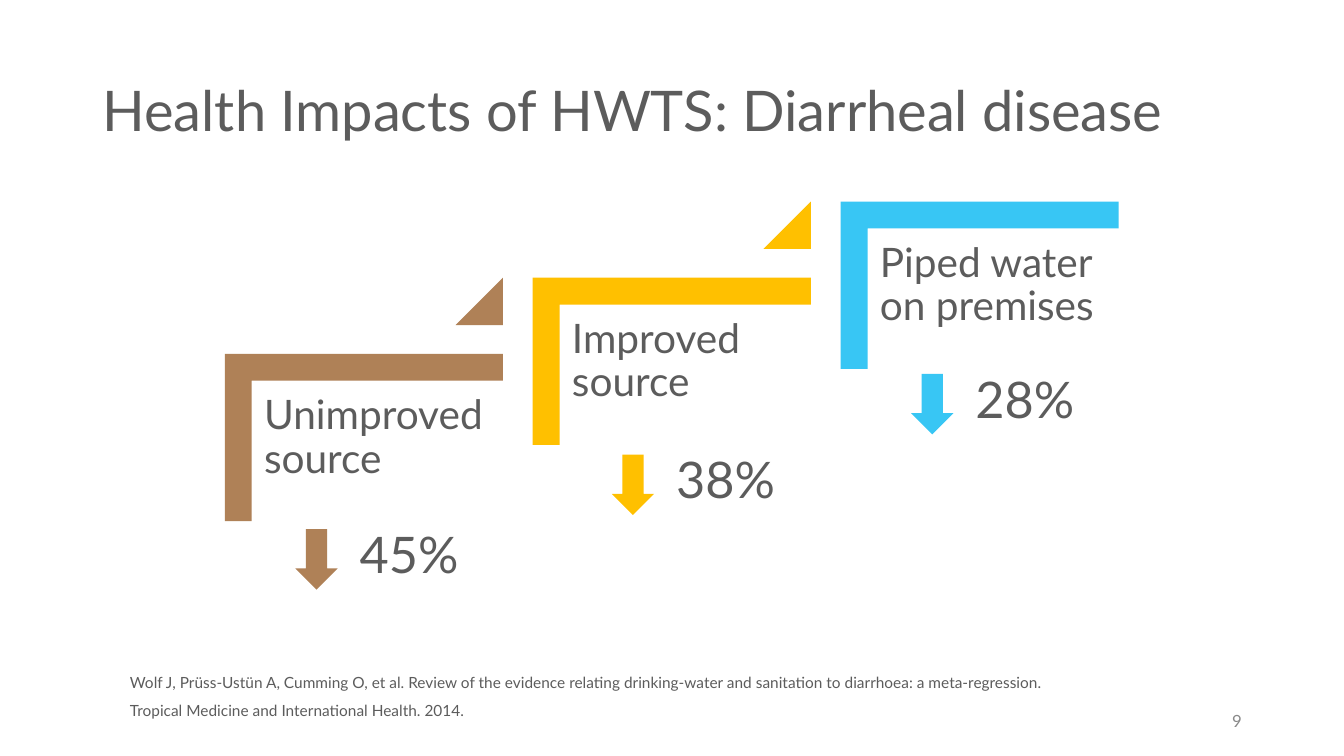
from dataclasses import dataclass

from pptx import Presentation
from pptx.dml.color import RGBColor
from pptx.enum.shapes import MSO_SHAPE
from pptx.enum.text import MSO_ANCHOR, PP_ALIGN
from pptx.util import Emu, Pt

CORNER = MSO_SHAPE.CORNER
TRIANGLE = MSO_SHAPE.ISOSCELES_TRIANGLE
DOWN_ARROW = MSO_SHAPE.DOWN_ARROW
TOP, MIDDLE = MSO_ANCHOR.TOP, MSO_ANCHOR.MIDDLE
LEFT, RIGHT = PP_ALIGN.LEFT, PP_ALIGN.RIGHT
EMU_PER_PX = 914400 // 200


@dataclass(frozen=True)
class Theme:
    """Colours, font and type sizes of the deck."""

    font: str = "Lato"
    text: str = "5C5C5C"
    muted: str = "898989"
    brown: str = "AF8157"
    amber: str = "FFC000"
    sky: str = "38C6F4"
    title: int = 40
    figure: int = 36
    label: int = 29
    number: int = 12
    source: int = 11


@dataclass(frozen=True)
class Box:
    """A rectangle in px."""

    left: int
    top: int
    width: int
    height: int

    def inner(self, left, top, width, height):
        """Return a box placed relative to this one."""
        return Box(self.left + left, self.top + top, width, height)

    def turned(self):
        """Return the unrotated frame that fills this box after a quarter turn."""
        shift = (self.width - self.height) // 2
        return self.inner(shift, -shift, self.height, self.width)

    def emu(self):
        """Return left, top, width and height in EMU."""
        sides = (self.left, self.top, self.width, self.height)
        return [Emu(side * EMU_PER_PX) for side in sides]


THEME = Theme()
STEPS = [
    ("Unimproved source", "45%", THEME.brown, (586, 1050)),
    ("Improved source", "38%", THEME.amber, (1214, 902)),
    ("Piped water on premises", "28%", THEME.sky, (1808, 742)),
]
SOURCE_LINES = [
    "Wolf J, Prüss-Ustün A, Cumming O, et al. Review of the evidence relating "
    "drinking-water and sanitation to diarrhoea: a meta-regression.",
    "Tropical Medicine and International Health. 2014.",
]


def add_text(page, box, lines, size, color=THEME.text, anchor=TOP, align=LEFT,
             spacing=1.0, inset=None, wrap=True):
    """Add a text box holding one paragraph of one or more lines."""
    frame = page.shapes.add_textbox(*box.emu()).text_frame
    frame.word_wrap = wrap
    frame.vertical_anchor = anchor
    if inset is not None:
        margin = Emu(inset * EMU_PER_PX)
        frame.margin_left = frame.margin_right = margin
        frame.margin_top = frame.margin_bottom = margin
    para = frame.paragraphs[0]
    para.alignment = align
    para.line_spacing = spacing
    for index, line in enumerate(lines):
        if index:
            para.add_line_break()
        span = para.add_run()
        span.text = line
        span.font.name = THEME.font
        span.font.size = Pt(size)
        span.font.color.rgb = RGBColor.from_string(color)


def add_solid(page, kind, box, color, adjustments=()):
    """Add a filled preset shape without outline or shadow."""
    shape = page.shapes.add_shape(kind, *box.emu())
    shape.shadow.inherit = False
    shape.fill.solid()
    shape.fill.fore_color.rgb = RGBColor.from_string(color)
    shape.line.fill.background()
    for index, value in enumerate(adjustments):
        shape.adjustments[index] = value
    return shape


def add_step(page, box, label, color):
    """Add one stair: a corner bracket with its label inside."""
    bracket = add_solid(page, CORNER, box.turned(), color, (0.161, 0.161))
    bracket.rotation = 90
    add_text(page, box.inner(54, 56, 500, 438), [label], THEME.label,
             spacing=0.9, inset=24)


def add_reduction(page, box, figure, color):
    """Add a down arrow with the percentage beside it."""
    add_solid(page, DOWN_ARROW, box.inner(0, 0, 84, 120), color)
    add_text(page, box.inner(108, -22, 242, 142), [figure], THEME.figure, wrap=False)


def add_staircase(page, box):
    """Add the rising steps, the wedges between them and their reductions."""
    width, height, pitch, rise = 552, 332, 611, 151
    for index, (label, figure, color, arrow) in enumerate(STEPS):
        step = box.inner(index * pitch, box.height - height - index * rise,
                         width, height)
        add_step(page, step, label, color)
        if index < len(STEPS) - 1:
            wedge = step.inner(width - 94, -rise, 94, 94)
            add_solid(page, TRIANGLE, wedge, color, (1,))
        add_reduction(page, Box(*arrow, 350, 120), figure, color)


def add_footer(page, box):
    """Add the source reference and the page number."""
    add_text(page, box.inner(0, 0, 2038, 128), SOURCE_LINES, THEME.source, spacing=1.5)
    add_text(page, box.inner(1646, 82, 600, 80), ["9"], THEME.number,
             THEME.muted, MIDDLE, RIGHT)


def main():
    """Build the deck and save it."""
    deck = Presentation()
    deck.slide_width, deck.slide_height = Box(0, 0, 2667, 1500).emu()[2:]
    page = deck.slides.add_slide(deck.slide_layouts[6])
    add_text(page, Box(184, 80, 2300, 290),
             ["Health Impacts of HWTS: Diarrheal disease"], THEME.title,
             anchor=MIDDLE, spacing=0.9)
    add_staircase(page, Box(446, 400, 1774, 634))
    add_footer(page, Box(238, 1308, 2246, 162))
    deck.save("out.pptx")


if __name__ == "__main__":
    main()
